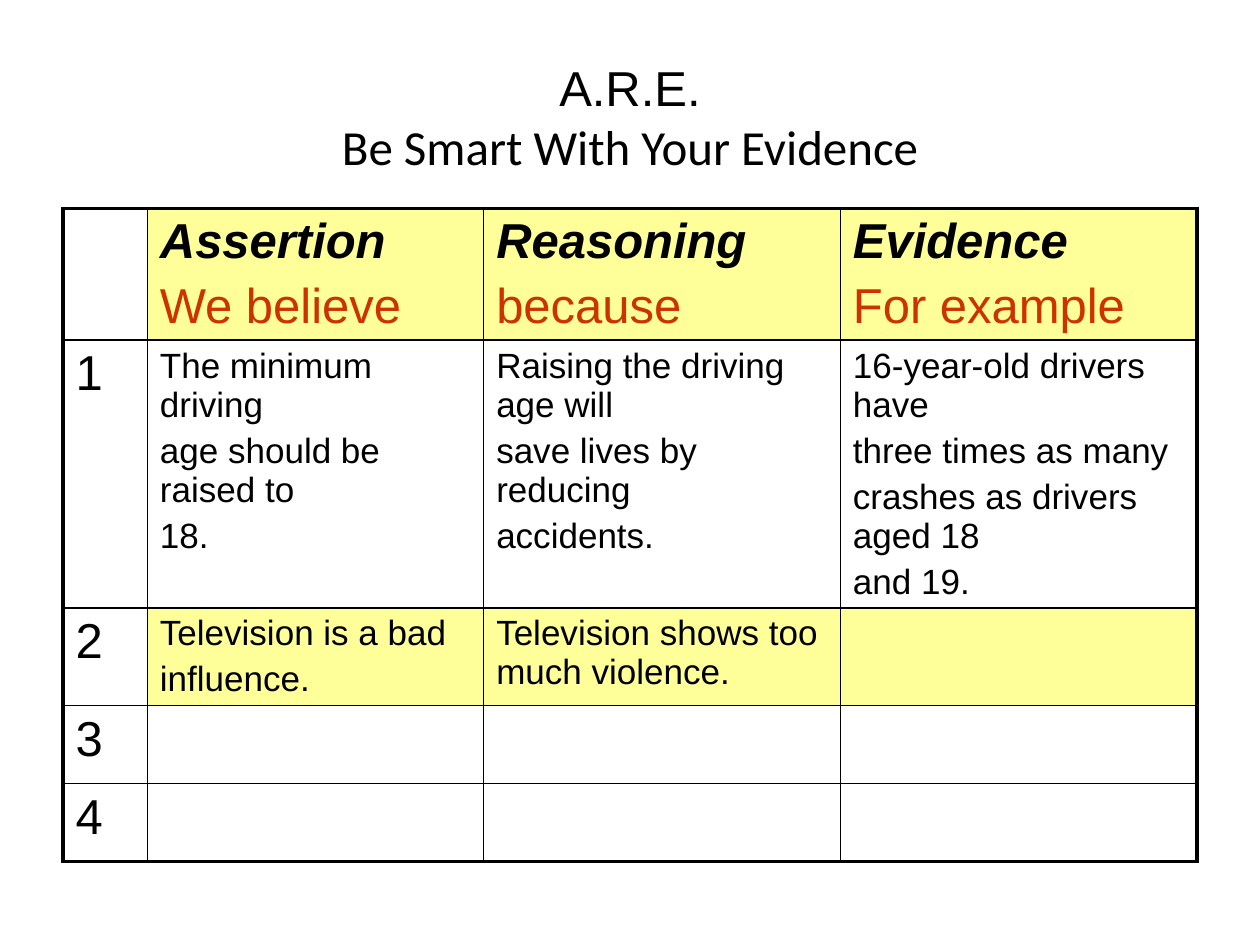
from lxml import etree
from pptx import Presentation
from pptx.dml.color import RGBColor
from pptx.enum.text import MSO_ANCHOR, MSO_AUTO_SIZE, PP_ALIGN
from pptx.oxml.ns import qn
from pptx.util import Cm, Pt

BLACK = RGBColor(0x00, 0x00, 0x00)
RED = RGBColor(0xCC, 0x33, 0x00)
YELLOW = RGBColor(0xFF, 0xFF, 0x99)
CENTER = PP_ALIGN.CENTER
MIDDLE = MSO_ANCHOR.MIDDLE
NO_AUTOFIT = MSO_AUTO_SIZE.NONE

TITLE_LINES = [("A.R.E.", "Arial"), ("Be Smart With Your Evidence", "Calibri")]
COL_WIDTHS = [1.7, 6.78, 7.19, 7.19]
ROW_HEIGHTS = [1.5] + [1.57] * 4
YELLOW_ROWS = (0, 2)
ROWS = [
    [[], ["Assertion", "We believe"], ["Reasoning", "because"],
     ["Evidence", "For example"]],
    [["1"],
     ["The minimum driving", "age should be raised to", "18."],
     ["Raising the driving age will", "save lives by reducing", "accidents."],
     ["16-year-old drivers have", "three times as many",
      "crashes as drivers aged 18", "and 19."]],
    [["2"], ["Television is a bad", "influence."],
     ["Television shows too much violence."], []],
    [["3"], [], [], []],
    [["4"], [], [], []],
]


class SlideBuilder:
    font = "Arial"
    large, small = 28, 20
    thick, thin = 2.25, 1

    def __init__(self, slide):
        self.s = slide

    def style(self, r, size, color=BLACK, name=None, bold=False, italic=False):
        f = r.font
        f.name, f.size = name or self.font, Pt(size)
        f.bold, f.italic = bold, italic
        f.color.rgb = color

    def title(self, lines, left, top, width, height):
        sp = self.s.shapes.title
        sp.left, sp.top, sp.width, sp.height = map(Cm, (left, top, width, height))
        tf = sp.text_frame
        tf.auto_size, tf.vertical_anchor = NO_AUTOFIT, MIDDLE
        p = tf.paragraphs[0]
        p.alignment = CENTER
        for i, (text, name) in enumerate(lines):
            if i:
                p.add_line_break()
            r = p.add_run()
            r.text = text
            self.style(r, self.large, name=name)

    def borders(self, cell, widths):
        """Draw the cell's edges; widths maps L, R, T and B to points."""
        tcPr = cell._tc.get_or_add_tcPr()
        for side, width in widths.items():
            ln = etree.SubElement(tcPr, qn(f"a:ln{side}"), w=str(Pt(width)))
            fill = etree.SubElement(ln, qn("a:solidFill"))
            etree.SubElement(fill, qn("a:srgbClr"), val=str(BLACK))

    def cell_text(self, cell, lines, is_header, size):
        tf = cell.text_frame
        tf.text = "\n".join(lines)
        for i, p in enumerate(tf.paragraphs):
            if i:
                p.space_before = Pt(size * 0.2)
            heading = is_header and i == 0
            color = RED if is_header and i else BLACK
            for r in p.runs:
                self.style(r, size, color, bold=heading, italic=heading)

    def table(self, rows, left, top, col_widths, row_heights):
        last_row, last_col = len(rows) - 1, len(col_widths) - 1
        table = self.s.shapes.add_table(
            len(rows), len(col_widths), Cm(left), Cm(top),
            Cm(sum(col_widths)), Cm(sum(row_heights))).table
        table.first_row = table.horz_banding = False
        for column, width in zip(table.columns, col_widths):
            column.width = Cm(width)
        for row, height in zip(table.rows, row_heights):
            row.height = Cm(height)

        for i, row in enumerate(rows):
            for j, lines in enumerate(row):
                cell = table.cell(i, j)
                outer = {"L": j == 0, "R": j == last_col,
                         "T": i == 0, "B": i == last_row}
                self.borders(cell, {side: self.thick if edge else self.thin
                                    for side, edge in outer.items()})
                if i in YELLOW_ROWS and j:
                    cell.fill.solid()
                    cell.fill.fore_color.rgb = YELLOW
                else:
                    cell.fill.background()
                if lines:
                    size = self.large if i == 0 or j == 0 else self.small
                    self.cell_text(cell, lines, i == 0, size)


def main():
    prs = Presentation()
    prs.slide_width, prs.slide_height = Cm(25.4), Cm(19.05)
    builder = SlideBuilder(prs.slides.add_slide(prs.slide_layouts[5]))
    builder.title(TITLE_LINES, 1.27, 0.76, 22.86, 3.18)
    builder.table(ROWS, 1.27, 4.2, COL_WIDTHS, ROW_HEIGHTS)
    prs.save("out.pptx")


if __name__ == "__main__":
    main()
